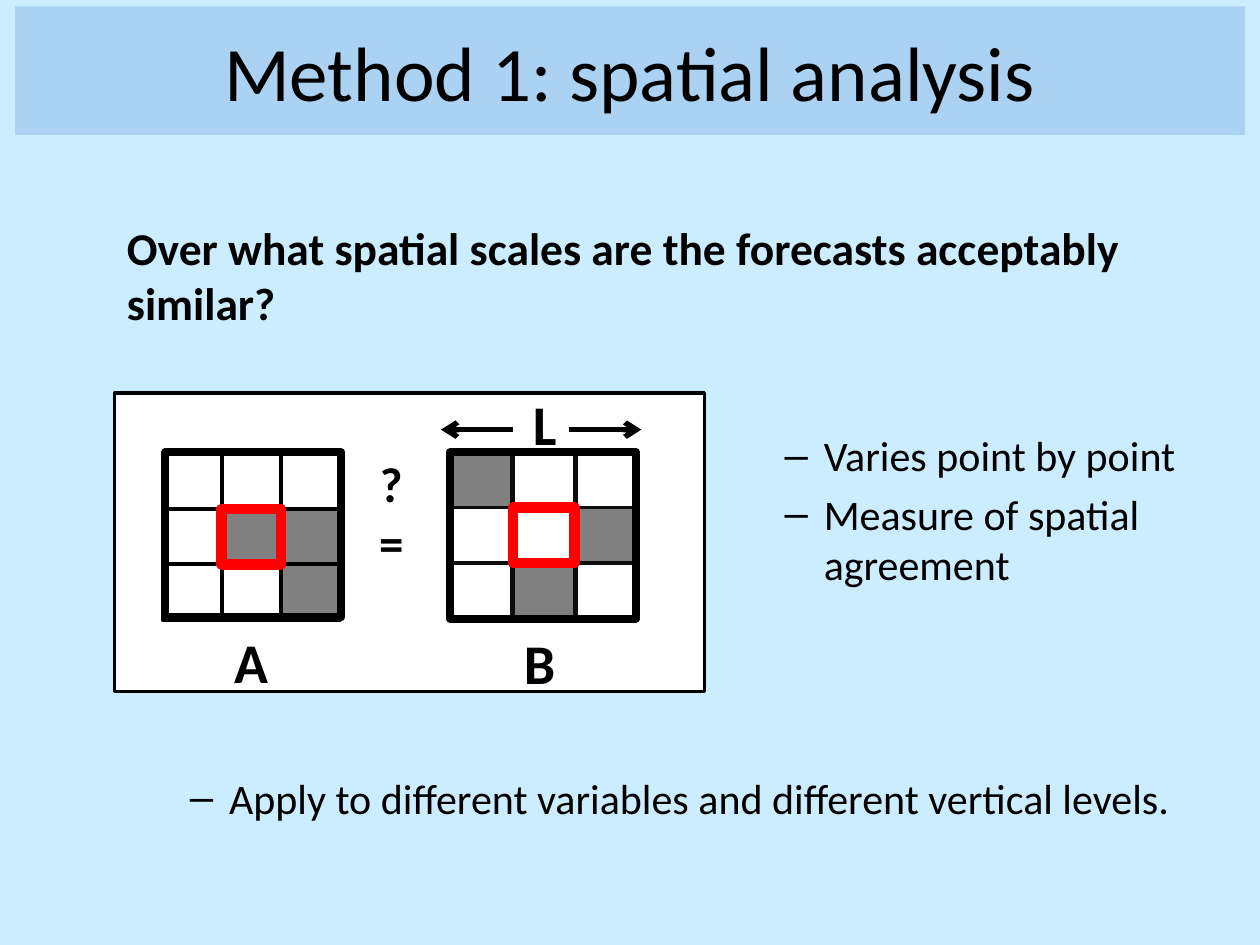
from lxml import etree
from pptx import Presentation
from pptx.dml.color import RGBColor
from pptx.enum.shapes import MSO_CONNECTOR as CONNECTOR, MSO_SHAPE as SHAPE
from pptx.enum.text import MSO_ANCHOR as ANCHOR, PP_ALIGN as ALIGN
from pptx.oxml.ns import qn
from pptx.util import Pt

PX = 9144  # 100 px to the inch
COLORS = {name: RGBColor.from_string(code) for name, code in {
    "sky": "CCECFF", "banner": "ABD1F3", "white": "FFFFFF", "grey": "808080",
    "black": "000000", "ink": "0D0D0D", "red": "FF0000"}.items()}


def add_rect(shapes, place, fill, line, weight):
    rect = shapes.add_shape(SHAPE.RECTANGLE, *[n * PX for n in place])
    rect.shadow.inherit = False
    if fill:
        rect.fill.solid()
        rect.fill.fore_color.rgb = COLORS[fill]
    else:
        rect.fill.background()
    rect.line.color.rgb = COLORS[line]
    rect.line.width = Pt(weight)


def add_text(shapes, place, lines, size, bold=False, align=ALIGN.LEFT, dashes=False):
    box = shapes.add_textbox(*[n * PX for n in place])
    frame = box.text_frame
    frame.word_wrap = True
    for i, line in enumerate(lines):
        para = frame.paragraphs[0] if i == 0 else frame.add_paragraph()
        para.alignment = align
        if dashes:
            if i:
                para.space_before = Pt(size * 0.2)
            props = para._p.get_or_add_pPr()
            props.set("marL", str(81 * PX))
            props.set("indent", str(-31 * PX))
            etree.SubElement(props, qn("a:buFont")).set("typeface", "Arial")
            etree.SubElement(props, qn("a:buChar")).set("char", "–")
        span = para.add_run()
        span.text = line
        span.font.color.rgb = COLORS["black"]
        for key, value in {"name": "Calibri", "size": Pt(size), "bold": bold}.items():
            setattr(span.font, key, value)


deck = Presentation()
deck.slide_width, deck.slide_height = 1000 * PX, 750 * PX
page = deck.slides.add_slide(deck.slide_layouts[5])
page.background.fill.solid()
page.background.fill.fore_color.rgb = COLORS["sky"]

# Title banner
title = page.shapes.title
for key, value in {"left": 12, "top": 5, "width": 976, "height": 102}.items():
    setattr(title, key, value * PX)
title.fill.solid()
title.fill.fore_color.rgb = COLORS["banner"]
title.text_frame.text = "Method 1: spatial analysis"
title.text_frame.vertical_anchor = ANCHOR.MIDDLE
para = title.text_frame.paragraphs[0]
para.alignment = ALIGN.CENTER
para.font.color.rgb = COLORS["black"]
for key, value in {"name": "Calibri", "size": Pt(44)}.items():
    setattr(para.font, key, value)

# Question
add_text(page.shapes, (91, 170, 827, 181),
         ["Over what spatial scales are the forecasts acceptably similar?"], 26, bold=True)

# Diagram panel
panel = page.shapes.add_group_shape().shapes
add_rect(panel, (91, 312, 468, 237), "white", "black", 2)

# Forecast grids: x marks a grey cell, the centre cell is outlined in red
grids = [
    {"cells": ["...", ".xx", "..x"], "left": 129, "top": 360, "width": 47, "pitch": 47,
     "line": "black", "weight": 2.25, "frame": (131, 359, 140, 131)},
    {"cells": ["x..", "..x", ".x."], "left": 357, "top": 359, "width": 49, "pitch": 50,
     "line": "ink", "weight": 2, "frame": (357, 359, 148, 132)},
]
for grid in grids:
    spots = [(row, col) for row in range(3) for col in range(3)]
    spots.sort(key=lambda spot: spot == (1, 1))  # centre on top
    for row, col in spots:
        place = (grid["left"] + col * grid["pitch"], grid["top"] + row * 44,
                 grid["width"], 44)
        fill = "grey" if grid["cells"][row][col] == "x" else "white"
        if (row, col) == (1, 1):
            add_rect(panel, place, fill, "red", 6)
        else:
            add_rect(panel, place, fill, grid["line"], grid["weight"])
    add_rect(panel, grid["frame"], None, "black", 4.5)

# Arrows for the length L
for start, end in [(452, 509), (407, 350)]:
    arrow = panel.add_connector(CONNECTOR.STRAIGHT, start * PX, 341 * PX, end * PX, 341 * PX)
    arrow.line.color.rgb = COLORS["black"]
    arrow.line.width = Pt(3)
    etree.SubElement(arrow.line._get_or_add_ln(), qn("a:tailEnd")).set("type", "arrow")
    etree.SubElement(arrow._element.spPr, qn("a:effectLst"))

# Diagram labels
add_text(panel, (278, 355, 65, 104), ["?", "="], 28, bold=True, align=ALIGN.CENTER)
for label, left, top, width in [("L", 413, 304, 39), ("A", 176, 493, 45), ("B", 406, 494, 45)]:
    add_text(panel, (left, top, width, 64), [label], 32, bold=True)

# Dash lists
add_text(page.shapes, (563, 336, 500, 180),
         ["Varies point by point", "Measure of spatial agreement"], 24, dashes=True)
add_text(page.shapes, (91, 608, 850, 50),
         ["Apply to different variables and different vertical levels."], 24, dashes=True)

deck.save("out.pptx")
